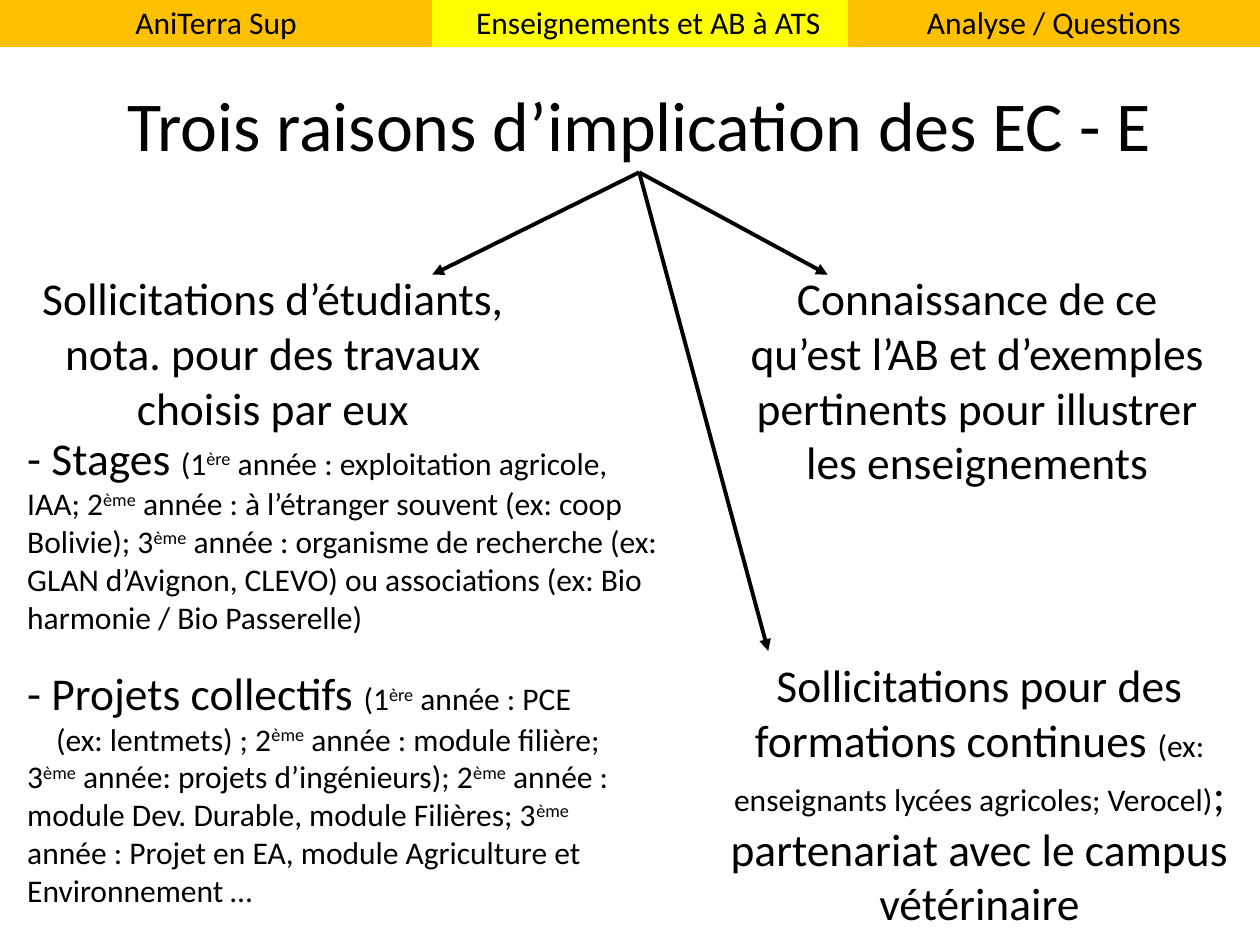
from dataclasses import dataclass

from lxml.etree import SubElement
from pptx import Presentation
from pptx.dml.color import RGBColor
from pptx.enum.shapes import MSO_CONNECTOR, MSO_SHAPE
from pptx.enum.text import MSO_ANCHOR, MSO_AUTO_SIZE, PP_ALIGN
from pptx.oxml.ns import qn
from pptx.util import Pt


@dataclass(frozen=True)
class Theme:
    font: str = "Calibri"
    ink: RGBColor = RGBColor(0, 0, 0)
    tab: RGBColor = RGBColor(0xFF, 0xC0, 0x00)
    active_tab: RGBColor = RGBColor(0xFF, 0xFF, 0x00)
    title: int = 40
    heading: int = 26
    detail: int = 18
    line: float = 2.25


THEME = Theme()
TABS = [
    ("AniTerra Sup", 0, 247, THEME.tab),
    ("Enseignements et AB à ATS", 247, 247, THEME.active_tab),
    ("Analyse / Questions", 484.5, 235.5, THEME.tab),
]
# Text between ^ marks is superscript.
INTERNSHIPS = [
    [("- Stages ", THEME.heading),
     ("(1^ère^ année : exploitation agricole, IAA; 2^ème^ année : à l’étranger "
      "souvent (ex: coop Bolivie); 3^ème^ année : organisme de recherche "
      "(ex: GLAN d’Avignon, CLEVO) ou associations (ex: Bio harmonie / "
      "Bio Passerelle)", THEME.detail)],
]
PROJECTS = [
    [("- Projets collectifs ", THEME.heading),
     ("(1^ère^ année : PCE", THEME.detail)],
    [("(ex: lentmets) ; 2^ème^ année : module filière; 3^ème^ année: projets "
      "d’ingénieurs); 2^ème^ année : module Dev. Durable, module Filières; "
      "3^ème^ année : Projet en EA, module Agriculture et Environnement …",
      THEME.detail)],
]
REQUESTS = [[("Sollicitations d’étudiants, nota. pour des travaux choisis par eux",
              THEME.heading)]]
KNOWLEDGE = [[("Connaissance de ce qu’est l’AB et d’exemples pertinents pour "
               "illustrer les enseignements", THEME.heading)]]
TRAINING = [[
    ("Sollicitations pour des formations continues ", THEME.heading),
    ("(ex: enseignants lycées agricoles; Verocel)", THEME.detail),
    ("; partenariat avec le campus vétérinaire", THEME.heading),
]]


def add_spans(para, text, size):
    for index, part in enumerate(text.split("^")):
        span = para.add_run()
        span.text = part
        font = span.font
        font.name, font.size, font.color.rgb = THEME.font, Pt(size), THEME.ink
        if index % 2:
            font._element.set("baseline", "30000")


def fill_text(shape, paragraphs, align):
    frame = shape.text_frame
    frame.word_wrap = True
    frame.auto_size = MSO_AUTO_SIZE.NONE
    frame.vertical_anchor = MSO_ANCHOR.TOP
    for index, spans in enumerate(paragraphs):
        para = frame.add_paragraph() if index else frame.paragraphs[0]
        para.alignment = align
        for text, size in spans:
            add_spans(para, text, size)


def add_tabs(page, left, top, height):
    for label, offset, width, color in TABS:
        tab = page.shapes.add_shape(MSO_SHAPE.RECTANGLE, Pt(left + offset),
                                    Pt(top), Pt(width), Pt(height))
        tab.shadow.inherit = False
        tab.fill.solid()
        tab.fill.fore_color.rgb = color
        tab.line.fill.background()
        fill_text(tab, [[(label, THEME.detail)]], PP_ALIGN.CENTER)


def add_title(page, left, top, width, height):
    title = page.shapes.title
    title.left, title.top = Pt(left), Pt(top)
    title.width, title.height = Pt(width), Pt(height)
    fill_text(title, [[("Trois raisons d’implication des EC - E", THEME.title)]],
              PP_ALIGN.CENTER)
    return title


def add_text(page, paragraphs, left, top, width, height, align=PP_ALIGN.CENTER):
    box = page.shapes.add_textbox(Pt(left), Pt(top), Pt(width), Pt(height))
    fill_text(box, paragraphs, align)
    return box


def add_arrow(page, source, x, y):
    """Draw an arrow from the bottom middle of source to (x, y)."""
    arrow = page.shapes.add_connector(MSO_CONNECTOR.STRAIGHT, 0, 0, Pt(x), Pt(y))
    arrow.begin_connect(source, 2)
    arrow.line.color.rgb = THEME.ink
    arrow.line.width = Pt(THEME.line)
    SubElement(arrow.line._get_or_add_ln(), qn("a:tailEnd"), type="triangle")
    SubElement(arrow._element.spPr, qn("a:effectLst"))


def add_student_reason(page, left, top):
    add_text(page, REQUESTS, left, top, 306, 101.5)
    add_text(page, INTERNSHIPS, left + 5.5, top + 91, 374.5, 126, PP_ALIGN.LEFT)
    projects = add_text(page, PROJECTS, left + 5.5, top + 225.5, 368.5, 147.5,
                        PP_ALIGN.LEFT)
    continuation = projects.text_frame.paragraphs[1]
    continuation._p.get_or_add_pPr().set("indent", str(Pt(16.5)))


def add_teaching_reasons(page, left, top):
    add_text(page, KNOWLEDGE, left + 17, top, 284, 133)
    add_text(page, TRAINING, left, top + 221, 320.5, 165)


def main():
    deck = Presentation()
    deck.slide_width, deck.slide_height = Pt(720), Pt(540)
    page = deck.slides.add_slide(deck.slide_layouts[5])
    title = add_title(page, 36.5, 43, 657.5, 55.5)
    add_tabs(page, 0, -2, 29)
    add_student_reason(page, 3, 151)
    add_teaching_reasons(page, 399.5, 151)
    for x, y in [(247, 157), (473, 157), (439, 372)]:
        add_arrow(page, title, x, y)
    deck.save("out.pptx")


if __name__ == "__main__":
    main()
